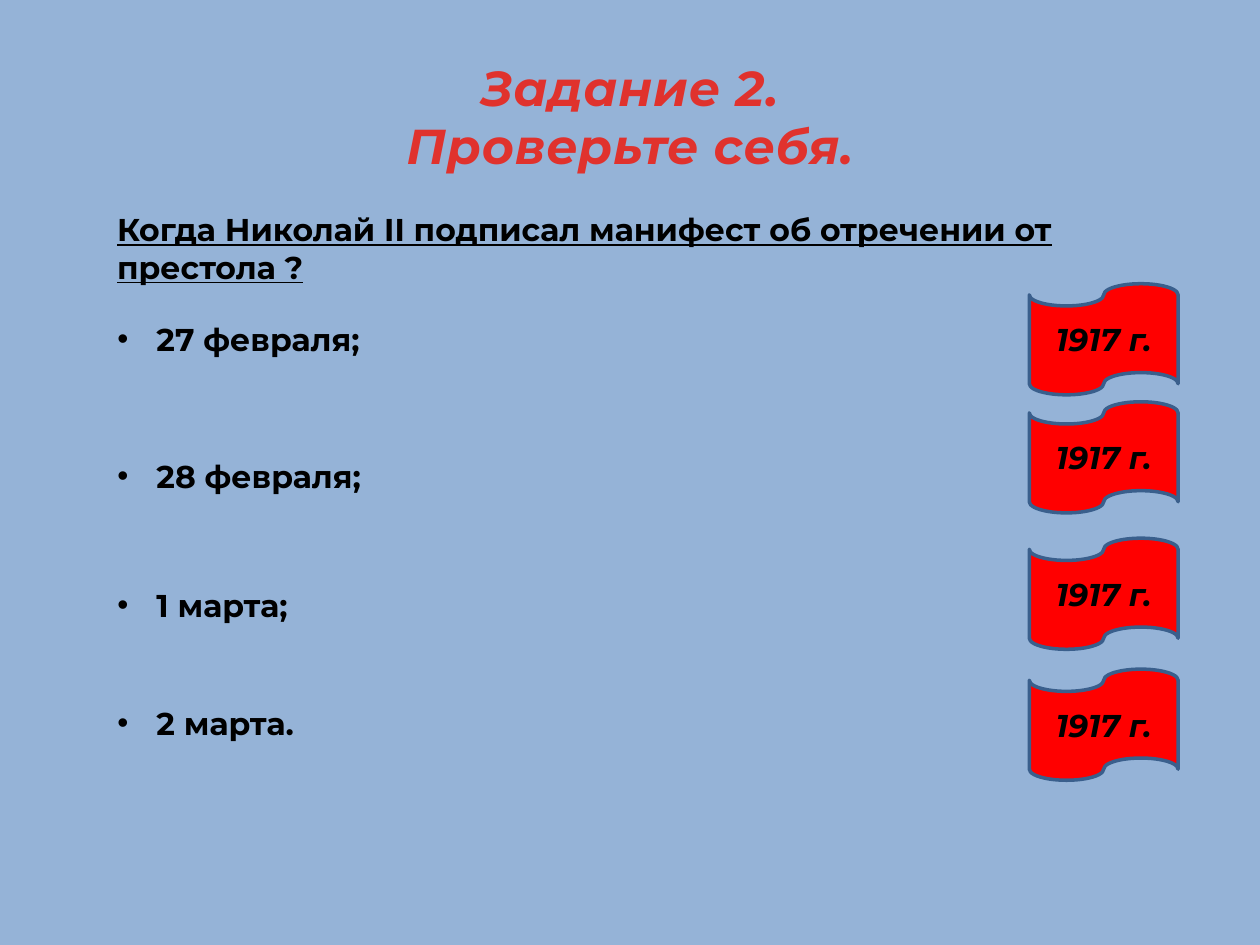
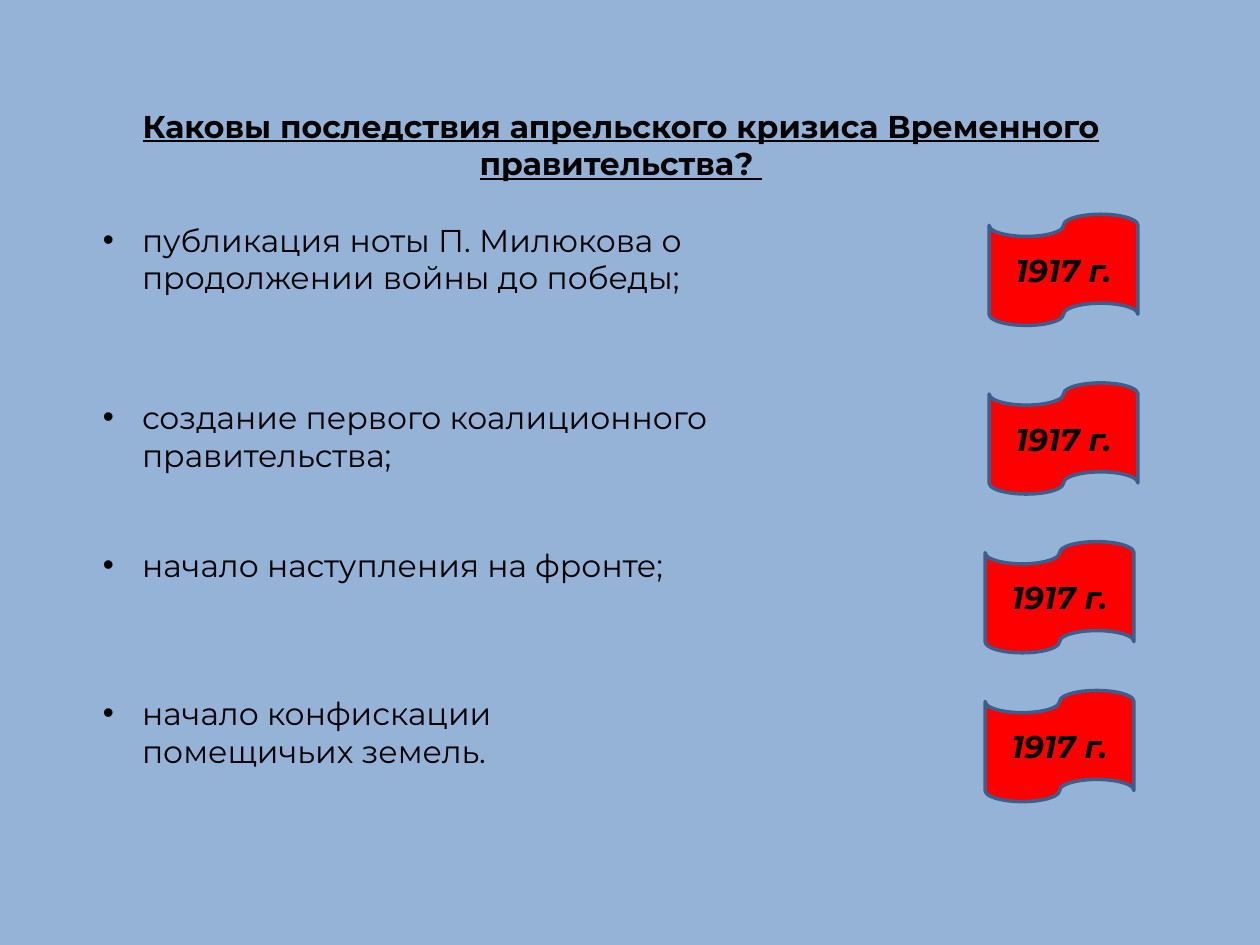
from pptx import Presentation
from pptx.dml.color import RGBColor as Rgb
from pptx.enum.shapes import MSO_SHAPE as Kind
from pptx.enum.text import MSO_ANCHOR as Anchor, MSO_AUTO_SIZE as Auto, PP_ALIGN as Align
from pptx.util import Cm, Pt

FACE = "Montserrat"
BLUE, RED, TAPE, EDGE, BLACK = "95B3D7", "E0322D", "FF0000", "3A5F8C", "000000"
YEAR = "1917 г."
LINE = 0.774
INDENT = 0.79
FLAG = (3, 2.24)

SLIDES = [
    {
        "title": "Задание 2.\vПроверьте себя.",
        "place": (1.27, 0.76, 22.86, 3.15),
        "look": {"size": 28, "color": RED, "bold": True, "italic": True},
        "track": 50,
        "query": "Когда Николай II подписал манифест об отречении от престола ?",
        "list": (2.11, 14.5),
        "bold": True,
        "items": [
            ("27 февраля;", 1, 6.32),
            ("28 февраля;", 1, 9.09),
            ("1 марта;", 1, 11.71),
            ("2 марта.", 1, 14.1),
        ],
        "flags": [(20.75, 5.72), (20.75, 8.1), (20.75, 10.85), (20.75, 13.49)],
    },
    {
        "title": "Каковы последствия апрельского кризиса Временного правительства? ",
        "place": (1.09, 1.32, 22.86, 3.18),
        "look": {"bold": True, "underline": True},
        "list": (1.82, 12.7),
        "bold": False,
        "items": [
            ("публикация ноты П. Милюкова о продолжении войны до победы;", 2, 4.32),
            ("создание первого коалиционного правительства;", 2, 7.92),
            ("начало наступления на фронте;", 1, 10.92),
            ("начало конфискации помещичьих земель.", 2, 13.92),
        ],
        "flags": [(19.94, 4.32), (19.94, 7.72), (19.86, 10.92), (19.86, 13.92)],
    },
]


def paint(code):
    return Rgb.from_string(code)


def style(para, size=18, color=BLACK, bold=False, italic=False, underline=False):
    font = para.font
    font.name, font.size = FACE, Pt(size)
    font.bold, font.italic, font.underline = bold, italic, underline
    font.color.rgb = paint(color)


def move(shape, left, top, width, height):
    shape.left, shape.top = Cm(left), Cm(top)
    shape.width, shape.height = Cm(width), Cm(height)


def add_title(slide, data):
    shape = slide.shapes.title
    move(shape, *data["place"])
    frame = shape.text_frame
    frame.auto_size = Auto.NONE
    frame.vertical_anchor = Anchor.MIDDLE
    frame.text = data["title"]
    para = frame.paragraphs[0]
    para.alignment = Align.CENTER
    style(para, **data["look"])
    if "track" in data:
        for run in para.runs:
            run.font._element.set("spc", str(data["track"]))


def add_query(slide, text):
    frame = slide.shapes.add_textbox(Cm(2.11), Cm(4.11), Cm(21.41), Cm(1.8)).text_frame
    frame.word_wrap = True
    frame.text = text
    style(frame.paragraphs[0], bold=True, underline=True)


def add_list(slide, data):
    items = data["items"]
    left, width = data["list"]
    top = items[0][2]
    end = items[-1][2] + items[-1][1] * LINE + 0.26
    shape = slide.placeholders[1]
    move(shape, left, top, width, end - top)
    frame = shape.text_frame
    frame.auto_size = Auto.NONE
    frame.text = "\n".join(text for text, _, _ in items)
    base = top
    for para, (_, lines, start) in zip(frame.paragraphs, items):
        props = para._p.get_or_add_pPr()
        props.set("marL", str(Cm(INDENT)))
        props.set("indent", str(-Cm(INDENT)))
        para.space_before = Pt(round(Cm(start - base).pt, 1))
        style(para, bold=data["bold"])
        base = start + lines * LINE


def add_flag(slide, left, top):
    shape = slide.shapes.add_shape(
        Kind.FLOWCHART_PUNCHED_TAPE, Cm(left), Cm(top), *map(Cm, FLAG))
    shape.shadow.inherit = False
    shape.fill.solid()
    shape.fill.fore_color.rgb = paint(TAPE)
    shape.line.color.rgb = paint(EDGE)
    shape.line.width = Pt(2)
    frame = shape.text_frame
    frame.vertical_anchor = Anchor.MIDDLE
    frame.text = YEAR
    para = frame.paragraphs[0]
    para.alignment = Align.CENTER
    style(para, bold=True, italic=True)


def main():
    deck = Presentation()
    deck.slide_width, deck.slide_height = Cm(25.4), Cm(19.05)
    back = deck.slide_master.background.fill
    back.solid()
    back.fore_color.rgb = paint(BLUE)
    for data in SLIDES:
        slide = deck.slides.add_slide(deck.slide_layouts[1])
        add_title(slide, data)
        if "query" in data:
            add_query(slide, data["query"])
        add_list(slide, data)
        for spot in data["flags"]:
            add_flag(slide, *spot)
    deck.save("out.pptx")


if __name__ == "__main__":
    main()
